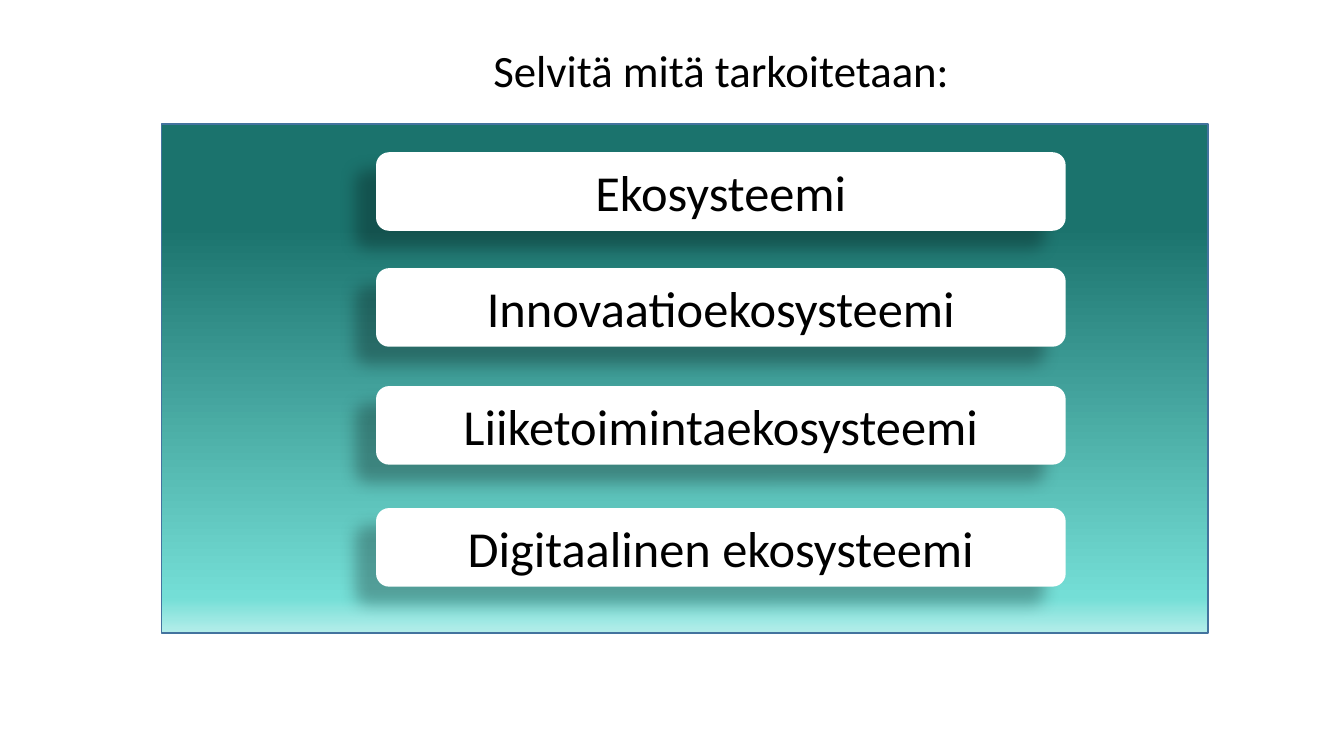
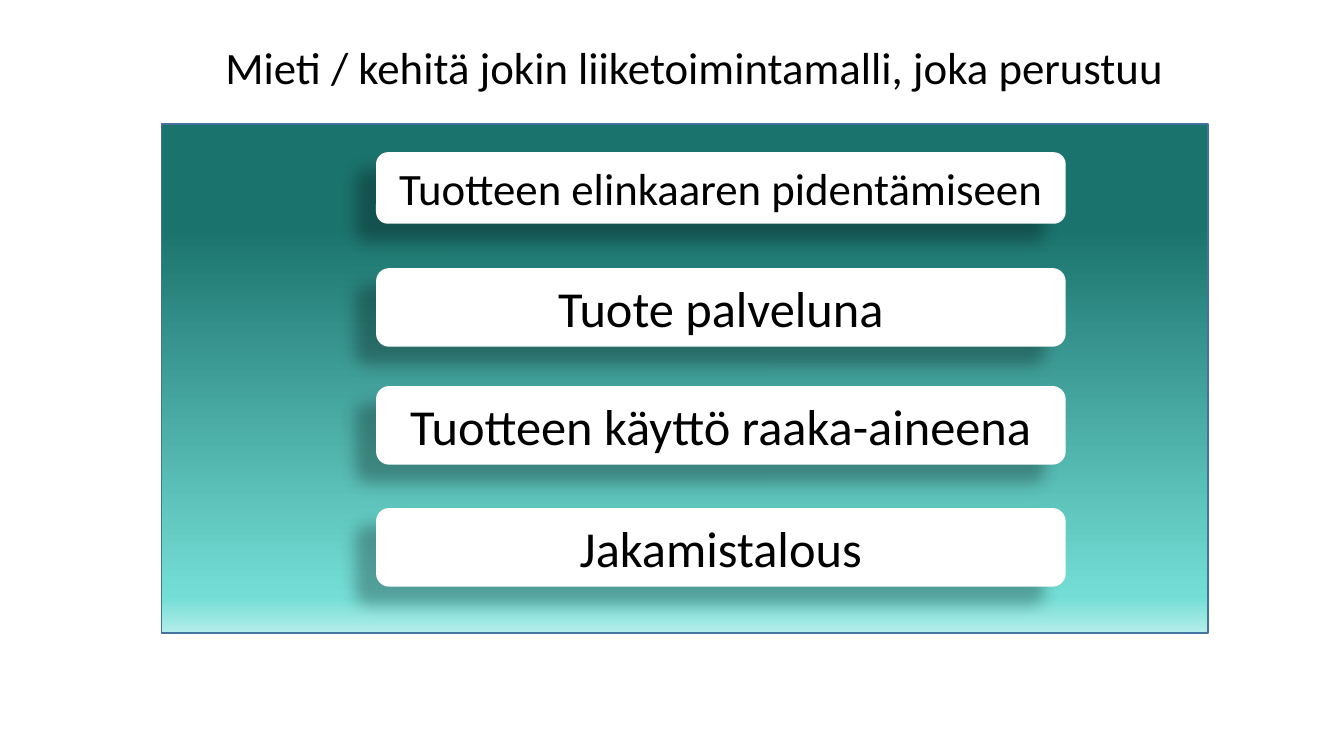
from dataclasses import dataclass

import pptx
import pptx.dml.color
import pptx.enum.shapes
import pptx.enum.text
import pptx.oxml
import pptx.oxml.ns
import pptx.util
from pptx.dml.color import RGBColor

PX = 9144  # EMU per px, 100 px to the inch
FONT = "Calibri"
BLACK = RGBColor(0x00, 0x00, 0x00)
WHITE = RGBColor(0xFF, 0xFF, 0xFF)
PANEL_EDGE = RGBColor(0x43, 0x73, 0x9E)
DARK_TEAL = RGBColor(0x1B, 0x73, 0x6D)
AQUA = RGBColor(0x74, 0xDE, 0xD6)
PALE_AQUA = RGBColor(0xB4, 0xEE, 0xEA)
PANEL_STOPS = ((0, DARK_TEAL), (20, DARK_TEAL), (93, AQUA), (100, PALE_AQUA))

CARD_LEFT, CARD_WIDTH = 373, 684
CARD_TOPS = (151, 266, 383, 504)


@dataclass(frozen=True)
class Box:
    left: int
    top: int
    width: int
    height: int

    def emu(self) -> tuple:
        return tuple(pptx.util.Emu(n * PX) for n in
                     (self.left, self.top, self.width, self.height))


@dataclass(frozen=True)
class Card:
    text: str
    height: int = 78
    size: int = 36


@dataclass(frozen=True)
class Page:
    title: str
    title_box: Box
    cards: tuple


PANEL = Box(160, 123, 1038, 505)
PAGES = (
    Page("Selvitä mitä tarkoitetaan:", Box(286, 37, 859, 64), (
        Card("Ekosysteemi"),
        Card("Innovaatioekosysteemi"),
        Card("Liiketoimintaekosysteemi"),
        Card("Digitaalinen ekosysteemi"),
    )),
    Page("Mieti / kehitä jokin liiketoimintamalli, joka perustuu", Box(196, 34, 986, 64), (
        Card("Tuotteen elinkaaren pidentämiseen", height=71, size=32),
        Card("Tuote palveluna"),
        Card("Tuotteen käyttö raaka-aineena"),
        Card("Jakamistalous"),
    )),
)


def write(sp, text: str, size: int) -> None:
    """Put one centred line of text into a shape."""
    tf = sp.text_frame
    tf.word_wrap = True
    tf.vertical_anchor = pptx.enum.text.MSO_ANCHOR.MIDDLE
    p = tf.paragraphs[0]
    p.text = text
    p.alignment = pptx.enum.text.PP_ALIGN.CENTER
    p.font.name = FONT
    p.font.size = pptx.util.Pt(size)
    p.font.color.rgb = BLACK


def add_panel(s) -> None:
    """Draw the teal panel, dark at the top."""
    sp = s.shapes.add_shape(pptx.enum.shapes.MSO_SHAPE.RECTANGLE, *PANEL.emu())
    sp.shadow.inherit = False
    sp.line.color.rgb = PANEL_EDGE
    sp.line.width = pptx.util.Pt(1)
    sp.fill.gradient()
    sp.fill.gradient_angle = 270
    stops = sp.element.spPr.find(".//" + pptx.oxml.ns.qn("a:gsLst"))
    for stop in list(stops):
        stops.remove(stop)
    for percent, color in PANEL_STOPS:
        stops.append(pptx.oxml.parse_xml(
            f'<a:gs {pptx.oxml.ns.nsdecls("a")} pos="{percent * 1000}">'
            f'<a:srgbClr val="{color}"/></a:gs>'))


def add_title(s, page: Page) -> None:
    write(s.shapes.add_textbox(*page.title_box.emu()), page.title, 32)


def add_card(s, card: Card, top: int) -> None:
    """Draw a white rounded card with a soft shadow to the lower left."""
    box = Box(CARD_LEFT, top, CARD_WIDTH, card.height)
    sp = s.shapes.add_shape(pptx.enum.shapes.MSO_SHAPE.ROUNDED_RECTANGLE, *box.emu())
    sp.fill.solid()
    sp.fill.fore_color.rgb = WHITE
    sp.line.fill.background()
    sp.shadow.inherit = False
    effects = sp.element.spPr.find(pptx.oxml.ns.qn("a:effectLst"))
    effects.append(pptx.oxml.parse_xml(
        f'<a:outerShdw {pptx.oxml.ns.nsdecls("a")} blurRad="{pptx.util.Pt(11.8)}" '
        f'dist="{pptx.util.Pt(19.7)}" dir="{141 * 60000}" algn="ctr" rotWithShape="0">'
        f'<a:srgbClr val="{BLACK}"><a:alpha val="28000"/></a:srgbClr></a:outerShdw>'))
    write(sp, card.text, card.size)


def main() -> None:
    prs = pptx.Presentation()
    prs.slide_width = pptx.util.Emu(1333 * PX)
    prs.slide_height = pptx.util.Emu(750 * PX)
    for page in PAGES:
        s = prs.slides.add_slide(prs.slide_layouts[6])
        add_panel(s)
        add_title(s, page)
        for card, top in zip(page.cards, CARD_TOPS):
            add_card(s, card, top)
    prs.save("out.pptx")


if __name__ == "__main__":
    main()
